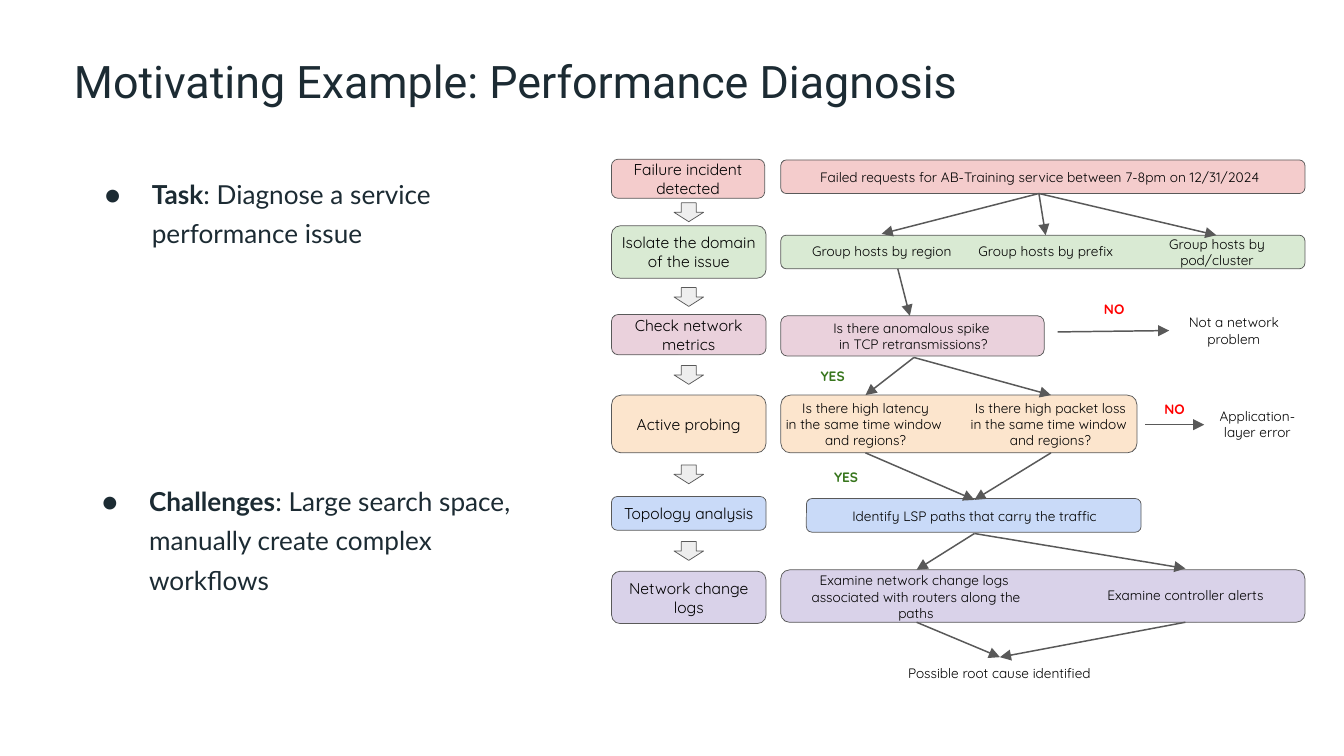
from dataclasses import dataclass
from lxml import etree
from pptx import Presentation
from pptx.dml.color import RGBColor
from pptx.enum.shapes import MSO_CONNECTOR, MSO_SHAPE
from pptx.enum.text import MSO_ANCHOR, MSO_AUTO_SIZE, PP_ALIGN
from pptx.oxml.ns import qn
from pptx.util import Inches, Pt

ROUND, DOWN = MSO_SHAPE.ROUNDED_RECTANGLE, MSO_SHAPE.DOWN_ARROW
STRAIGHT = MSO_CONNECTOR.STRAIGHT
TOP, MIDDLE = MSO_ANCHOR.TOP, MSO_ANCHOR.MIDDLE
LEFT, CENTER = PP_ALIGN.LEFT, PP_ALIGN.CENTER
NO_FIT = MSO_AUTO_SIZE.NONE

COLS, ROWS = 100, 56.25
PINK, GREEN, MAUVE = "F4CCCC", "D9EAD3", "EAD1DC"
PEACH, BLUE, LILAC = "FCE5CD", "C9DAF8", "D9D2E9"
INK, BLACK, GRAY, PALE = "1C2B33", "000000", "595959", "EEEEEE"
RED, DARK_GREEN = "FF0000", "38761D"


def color(hex_text):
    return RGBColor.from_string(hex_text)


def cells(*counts):
    """Turn grid columns or rows into lengths; one cell is a tenth of an inch."""
    return [Inches(n / 10) for n in counts]


def write(tf, text, size=7.3, font="Quicksand", ink=BLACK, bold=False,
          align=CENTER, anchor=MIDDLE, inset=0.5, spacing=None, lead="", bullet=None):
    """Fill a text frame, one paragraph a line, after an optional bold lead."""
    tf.word_wrap, tf.auto_size, tf.vertical_anchor = True, NO_FIT, anchor
    tf.margin_left, tf.margin_top, tf.margin_right, tf.margin_bottom = cells(*[inset] * 4)
    for i, line in enumerate(text.split("\n")):
        p = tf.add_paragraph() if i else tf.paragraphs[0]
        if bullet:
            add_bullet(p, bullet, size, font, ink)
        p.alignment, p.line_spacing = align, spacing
        p.space_before = p.space_after = Pt(0)
        for part, heavy in ((lead, True), (line, bold)):
            if part:
                r = p.add_run()
                r.text = part
                r.font.size, r.font.name, r.font.bold = Pt(size), font, heavy
                r.font.color.rgb = color(ink)


def add_bullet(p, char, size, font, ink):
    pPr = p._p.get_or_add_pPr()
    pPr.set("marL", str(Inches(0.5)))
    pPr.set("indent", str(Inches(-0.35)))
    tint = etree.SubElement(pPr, qn("a:buClr"))
    etree.SubElement(tint, qn("a:srgbClr"), val=ink)
    etree.SubElement(pPr, qn("a:buSzPts"), val=str(size * 100))
    etree.SubElement(pPr, qn("a:buFont"), typeface=font)
    etree.SubElement(pPr, qn("a:buChar"), char=char)


@dataclass
class Diagram:
    s: object
    line: str = GRAY
    outline: float = 0.39
    stroke: float = 0.79

    def title(self, text, *box):
        sp = self.s.shapes.title
        sp.left, sp.top, sp.width, sp.height = cells(*box)
        write(sp.text_frame, text, size=24, font="Roboto", ink=INK,
              align=LEFT, inset=0, spacing=1.15)

    def label(self, text, *box, **style):
        write(self.s.shapes.add_textbox(*cells(*box)).text_frame, text, **style)

    def point(self, lead, text, *box):
        self.label(text, *box, lead=lead, size=14, font="Lato", ink=INK, align=LEFT,
                   anchor=TOP, inset=0, spacing=1.25, bullet="●")

    def shape(self, fill, *box, kind=ROUND, text="", **style):
        sp = self.s.shapes.add_shape(kind, *cells(*box))
        sp.shadow.inherit = False
        sp.fill.solid()
        sp.fill.fore_color.rgb = color(fill)
        sp.line.color.rgb = color(self.line)
        sp.line.width = Pt(self.outline)
        if text:
            write(sp.text_frame, text, **style)

    def arrow(self, start, end):
        c = self.s.shapes.add_connector(STRAIGHT, *cells(*start, *end))
        c.line.color.rgb = color(self.line)
        c.line.width = Pt(self.stroke)
        etree.SubElement(c.line._get_or_add_ln(), qn("a:tailEnd"), type="triangle")
        etree.SubElement(c._element.spPr, qn("a:effectLst"))


STAGES = [  # text, fill, top, width, height
    ("Failure incident detected", PINK, 11.85, 11.4, 2.9),
    ("Isolate the domain of the issue", GREEN, 16.8, 11.5, 3.9),
    ("Check network metrics", MAUVE, 23.4, 11.5, 3),
    ("Active probing", PEACH, 29.4, 11.5, 4.3),
    ("Topology analysis", BLUE, 36.95, 11.5, 2.5),
    ("Network change logs", LILAC, 42.5, 11.5, 3.9),
]
STEP_TOPS = [15.1, 21.4, 27.2, 34.6, 40.3]
PANELS = [  # fill, left, top, width, height
    (PINK, 58.1, 11.9, 39, 2.5),
    (GREEN, 58.1, 17.5, 39, 2.5),
    (MAUVE, 58.1, 23.5, 19.6, 3),
    (PEACH, 58.1, 29.4, 26.5, 4.3),
    (BLUE, 60, 37.1, 24.9, 2.5),
    (LILAC, 58.1, 42.4, 39, 3.9),
]
LABELS = [  # text, left, top, width, height
    ("Failed requests for AB-Training service between 7-8pm on 12/31/2024",
     59.5, 11.9, 35.7, 2.5),
    ("Group hosts by region", 59.5, 17.45, 12.2, 2.5),
    ("Group hosts by prefix", 72, 17.45, 11.6, 2.5),
    ("Group hosts by pod/cluster", 83.9, 17.5, 13.3, 2.5),
    ("Is there anomalous spike \nin TCP retransmissions?", 58.3, 23.5, 19.3, 3),
    ("Not a network problem", 87, 22.9, 9.6, 3.4),
    ("Is there high latency\nin the same time window \nand regions?",
     57.8, 29.4, 13.2, 4.3),
    ("Is there high packet loss\nin the same time window \nand regions?",
     71.7, 29.4, 12.9, 4.3),
    ("Application-\nlayer error", 90, 29.7, 7.1, 3.7),
    ("Identify LSP paths that carry the traffic", 60.9, 37.15, 23.2, 2.5),
    ("Examine network change logs \nassociated with routers along the\npaths",
     59.5, 42.45, 17.3, 3.9),
    ("Examine controller alerts", 81.4, 42.35, 13.6, 3.9),
    ("Possible root cause identified", 61.45, 48.95, 25.8, 2.2),
]
ANSWERS = [  # text, colour, left, top
    ("NO", RED, 78, 21.9), ("NO", RED, 82.5, 29.3),
    ("YES", DARK_GREEN, 57.05, 26.9), ("YES", DARK_GREEN, 58.05, 34.4),
]
ARROWS = [  # starts, ends: every start leads to every end
    ([(77.3, 14.4)], [(65.6, 17.4), (77.8, 17.5), (90.5, 17.5)]),
    ([(66.8, 20)], [(67.7, 23.5)]),
    ([(78.7, 24.7)], [(87, 24.6)]),
    ([(68, 26.6)], [(64.4, 29.4), (78.2, 29.4)]),
    ([(85.2, 31.6)], [(89.6, 31.6)]),
    ([(64.4, 33.7), (78.2, 33.7)], [(72.5, 37.2)]),
    ([(72.5, 39.7)], [(68.2, 42.4), (88.2, 42.3)]),
    ([(68.2, 46.3), (88.2, 46.3)], [(74.4, 48.9)]),
]


def main():
    prs = Presentation()
    prs.slide_width, prs.slide_height = cells(COLS, ROWS)
    d = Diagram(prs.slides.add_slide(prs.slide_layouts[5]))
    d.title("Motivating Example: Performance Diagnosis", 5.5, 3.4, 80.8, 4.6)
    d.point("Task", ": Diagnose a service performance issue", 6.3, 12.7, 32, 17)
    d.point("Challenges", ": Large search space, manually create complex workflows",
            6.1, 35.55, 32, 13.9)
    for text, fill, top, width, height in STAGES:
        d.shape(fill, 45.5, top, width, height, text=text, size=8.4)
    for top in STEP_TOPS:
        d.shape(PALE, 50.15, top, 2.2, 1.4, kind=DOWN)
    for fill, *box in PANELS:
        d.shape(fill, *box)
    for text, *box in LABELS:
        d.label(text, *box)
    for text, ink, left, top in ANSWERS:
        d.label(text, left, top, 9.8, 2.2, ink=ink, bold=True)
    for starts, ends in ARROWS:
        for start in starts:
            for end in ends:
                d.arrow(start, end)
    prs.save("out.pptx")


if __name__ == "__main__":
    main()
